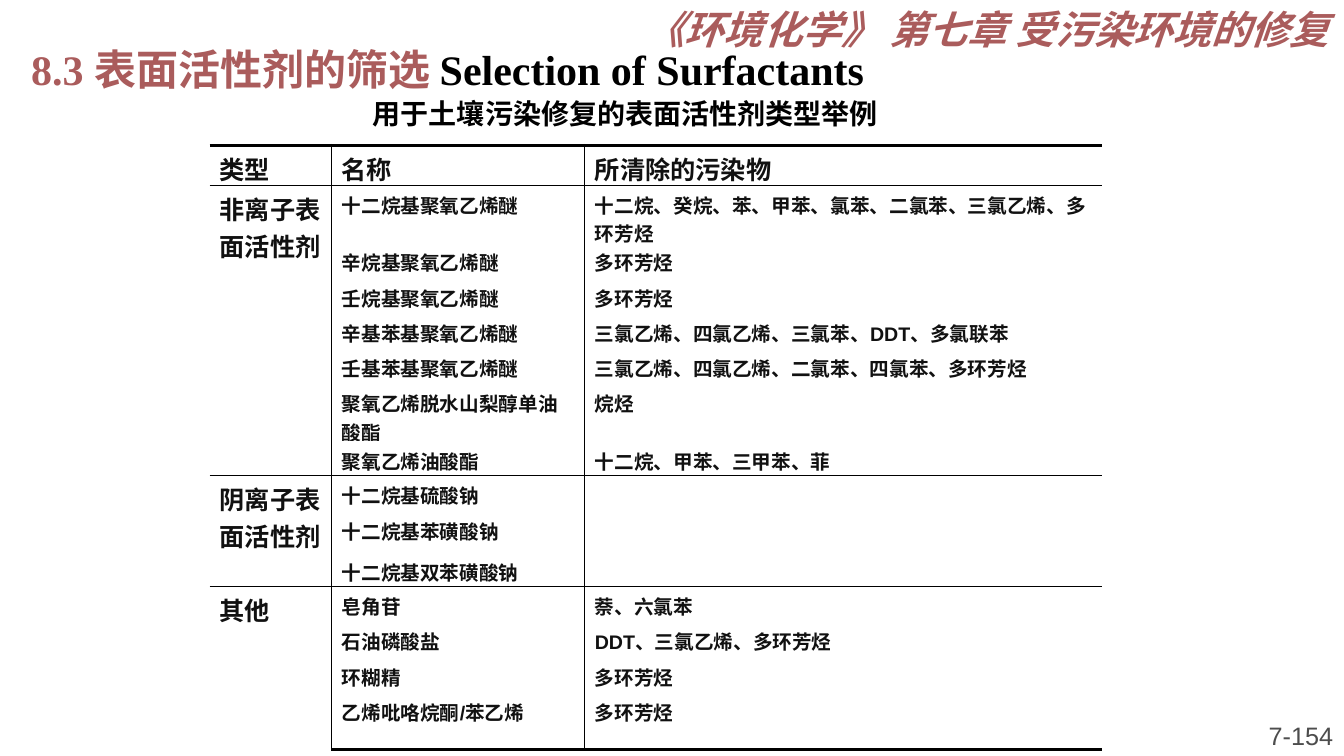
from lxml import etree
from pptx import Presentation
from pptx.dml.color import RGBColor
from pptx.enum.text import MSO_ANCHOR, PP_ALIGN
from pptx.oxml.ns import qn
from pptx.util import Inches, Pt

LEFT, RIGHT = PP_ALIGN.LEFT, PP_ALIGN.RIGHT
TOP, BOTTOM = MSO_ANCHOR.TOP, MSO_ANCHOR.BOTTOM
HEX = {"rose": "AA5C5C", "black": "000000", "ink": "111111",
       "gray": "4D4D4D", "white": "FFFFFF"}
ROMAN, SANS, HAN = "Times New Roman", "Arial", "Noto Sans CJK SC"

HEAD = ["类型", "名称", "所清除的污染物"]
GROUPS = [
    ("非离子表面活性剂", [
        ("十二烷基聚氧乙烯醚", "十二烷、癸烷、苯、甲苯、氯苯、二氯苯、三氯乙烯、多环芳烃"),
        ("辛烷基聚氧乙烯醚", "多环芳烃"),
        ("壬烷基聚氧乙烯醚", "多环芳烃"),
        ("辛基苯基聚氧乙烯醚", "三氯乙烯、四氯乙烯、三氯苯、DDT、多氯联苯"),
        ("壬基苯基聚氧乙烯醚", "三氯乙烯、四氯乙烯、二氯苯、四氯苯、多环芳烃"),
        ("聚氧乙烯脱水山梨醇单油酸酯", "烷烃"),
        ("聚氧乙烯油酸酯", "十二烷、甲苯、三甲苯、菲")]),
    ("阴离子表面活性剂", [
        ("十二烷基硫酸钠", ""),
        ("十二烷基苯磺酸钠", ""),
        ("十二烷基双苯磺酸钠", "")]),
    ("其他", [
        ("皂角苷", "萘、六氯苯"),
        ("石油磷酸盐", "DDT、三氯乙烯、多环芳烃"),
        ("环糊精", "多环芳烃"),
        ("乙烯吡咯烷酮/苯乙烯", "多环芳烃")]),
]
COLS = [1.21, 2.51, 5.13]
ROW = 0.35
TALL = {0: 0.4, 1: 0.57, 6: 0.57, 7: 0.34, 8: 0.36, 9: 0.4, 10: 0.34, 14: 0.57}
THICK, THIN, RULE = 2.25, 0.75, 1


def write(frame, runs, size, font=SANS, bold=True, italic=False,
          align=LEFT, space=None, hang=0):
    """Fill the frame with one paragraph of (text, colour) runs."""
    frame.word_wrap = True
    para = frame.paragraphs[0]
    para.alignment = align
    if space:
        para.line_spacing = space
    if hang:
        props = para._p.get_or_add_pPr()
        props.set("marL", str(Inches(hang)))
        props.set("indent", str(-Inches(hang)))
    for text, tint in runs:
        run = para.add_run()
        run.text = text
        face = run.font
        face.size, face.name = Pt(size), font
        face.bold, face.italic = bold, italic
        face.color.rgb = RGBColor.from_string(HEX[tint])
        etree.SubElement(run._r.get_or_add_rPr(), qn("a:ea")).set("typeface", HAN)


def label(slide, box, runs, size, anchor=TOP, **form):
    frame = slide.shapes.add_textbox(*map(Inches, box)).text_frame
    frame.vertical_anchor = anchor
    write(frame, runs, size, **form)


def edge(cell, **sides):
    """Set border widths in points for sides L, R, T, B; 0 hides one."""
    props = cell._tc.get_or_add_tcPr()
    for spot, side in enumerate("LRTB"):
        width = sides.get(side, 0)
        line = etree.Element(qn("a:ln" + side), w=str(Pt(width)))
        if width:
            fill = etree.SubElement(line, qn("a:solidFill"))
            etree.SubElement(fill, qn("a:srgbClr"), val=HEX["black"])
        else:
            etree.SubElement(line, qn("a:noFill"))
        props.insert(spot, line)


def draw_table(slide):
    rows = [HEAD]
    first, last = {0: THICK}, {0: RULE}
    spans = []
    for kind, items in GROUPS:
        start = len(rows)
        rows += [(kind if n == 0 else "", *item) for n, item in enumerate(items)]
        end = len(rows) - 1
        first[start] = last[start - 1]
        last[end] = THIN
        spans.append((start, end))
    last[len(rows) - 1] = THICK

    highs = [TALL.get(r, ROW) for r in range(len(rows))]
    place = map(Inches, (2.08, 1.44, sum(COLS), sum(highs)))
    table = slide.shapes.add_table(len(rows), len(COLS), *place).table
    table.first_row = table.horz_banding = False
    for col, width in zip(table.columns, COLS):
        col.width = Inches(width)
    for row, high in zip(table.rows, highs):
        row.height = Inches(high)
    for r, row in enumerate(rows):
        for c, text in enumerate(row):
            cell = table.cell(r, c)
            cell.margin_bottom = 0
            cell.fill.solid()
            cell.fill.fore_color.rgb = RGBColor.from_string(HEX["white"])
            edge(cell, L=THIN if c else 0, R=THIN if c < 2 else 0,
                 T=first.get(r, 0), B=last.get(r, 0))
            size = 18 if r == 0 or c == 0 else 14
            if text:
                write(cell.text_frame, [(text, "ink")], size)
            else:
                cell.text_frame.paragraphs[0].font.size = Pt(size)
    for start, end in spans:
        table.cell(start, 0).merge(table.cell(end, 0))


def main():
    deck = Presentation()
    deck.slide_width, deck.slide_height = Inches(13.33), Inches(7.5)
    slide = deck.slides.add_slide(deck.slide_layouts[6])
    label(slide, (0.21, 0.13, 10.71, 0.86),
          [("8.3 表面活性剂的筛选 ", "rose"), ("Selection of Surfactants", "black")],
          30, font=ROMAN, space=1.5, hang=0.5)
    label(slide, (3.6, 0.91, 5.74, 0.44),
          [("用于土壤污染修复的表面活性剂类型举例", "black")], 20, font=HAN)
    draw_table(slide)
    label(slide, (11.23, 6.98, 2.09, 0.52), [("7-154", "gray")], 18,
          bold=False, align=RIGHT, anchor=BOTTOM)
    label(slide, (5.33, 0, 7.95, 0.57),
          [("《环境化学》 第七章 受污染环境的修复", "rose")], 28,
          font=ROMAN, italic=True, align=RIGHT)
    deck.save("out.pptx")


if __name__ == "__main__":
    main()
